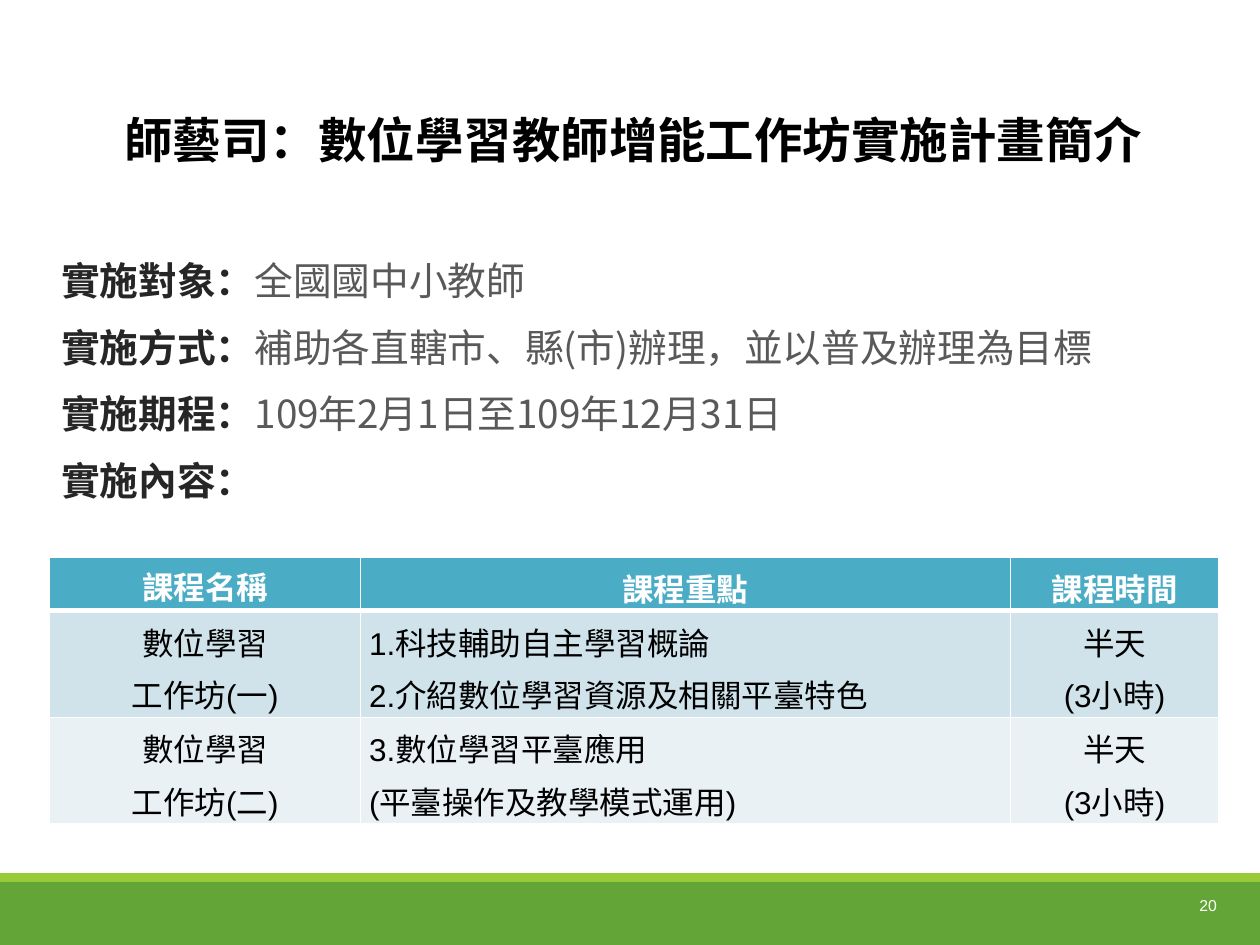
from lxml import etree
from pptx import Presentation
from pptx.dml.color import RGBColor
from pptx.enum.shapes import MSO_SHAPE
from pptx.enum.text import MSO_ANCHOR, PP_ALIGN
from pptx.oxml.ns import qn
from pptx.util import Pt

RECTANGLE = MSO_SHAPE.RECTANGLE
TOP, MIDDLE = MSO_ANCHOR.TOP, MSO_ANCHOR.MIDDLE
LEFT, CENTER, RIGHT, JUSTIFY = (
    PP_ALIGN.LEFT, PP_ALIGN.CENTER, PP_ALIGN.RIGHT, PP_ALIGN.JUSTIFY)

WHITE = RGBColor(0xFF, 0xFF, 0xFF)
BLACK = RGBColor(0, 0, 0)
LABEL_GRAY = RGBColor(0x26, 0x26, 0x26)
DETAIL_GRAY = RGBColor(0x59, 0x59, 0x59)
GREEN = RGBColor(0x63, 0xA5, 0x37)
LIME = RGBColor(0x99, 0xCB, 0x38)
HEADER_TEAL = RGBColor(0x4B, 0xAC, 0xC6)
ROW_FILLS = [RGBColor(0xD0, 0xE3, 0xEA), RGBColor(0xE9, 0xF1, 0xF5)]

CJK, LATIN = "Noto Sans CJK SC", "Arial"
SLIDE_WIDTH, SLIDE_HEIGHT = 720, 540

TITLE = "師藝司：數位學習教師增能工作坊實施計畫簡介"
PLAN = [
    ("實施對象：", "全國國中小教師"),
    ("實施方式：", "補助各直轄市、縣(市)辦理，並以普及辦理為目標"),
    ("實施期程：", "109年2月1日至109年12月31日"),
    ("實施內容：", ""),
]
PAGE_NUMBER = "20"

# Each cell is a list of paragraphs; "\n" is a line break inside one.
HEADERS = ["課程名稱", "課程重點", "課程時間"]
COURSES = [
    [["數位學習", "工作坊(一)"],
     ["1.科技輔助自主學習概論", "2.介紹數位學習資源及相關平臺特色"],
     ["半天", "(3小時)"]],
    [["數位學習", "工作坊(二)"],
     ["3.數位學習平臺應用\n(平臺操作及教學模式運用)"],
     ["半天", "(3小時)"]],
]
FOCUS_COLUMN = 1
FOCUS_ALIGNMENTS = [JUSTIFY, LEFT]
COLUMN_WIDTHS = [177.5, 371.5, 119]
ROW_HEIGHTS = [30.5, 61, 61]


def add_run(paragraph, text, size, color, bold=False, font=CJK):
    run = paragraph.add_run()
    run.text = text
    run.font.name = font
    run.font.size = Pt(size)
    run.font.bold = bold
    run.font.color.rgb = color
    east_asian = etree.SubElement(run.font._element, qn("a:ea"))
    east_asian.set("typeface", CJK)


def add_text_frame(slide, left, top, width, height, anchor=TOP):
    box = slide.shapes.add_textbox(Pt(left), Pt(top), Pt(width), Pt(height))
    box.text_frame.word_wrap = True
    box.text_frame.vertical_anchor = anchor
    return box.text_frame


def paragraphs_for(frame, items):
    """Yield each item with its own paragraph, using the first existing one."""
    for index, item in enumerate(items):
        yield frame.add_paragraph() if index else frame.paragraphs[0], item


def add_band(slide, top, height, color):
    band = slide.shapes.add_shape(
        RECTANGLE, Pt(0), Pt(top), Pt(SLIDE_WIDTH), Pt(height))
    band.shadow.inherit = False
    band.fill.solid()
    band.fill.fore_color.rgb = color
    band.line.fill.background()


def set_borders(cell, bottom_width):
    """Draw white borders; they must come before the cell's fill in the XML."""
    properties = cell._tc.get_or_add_tcPr()
    widths = {"a:lnL": 1, "a:lnR": 1, "a:lnT": 1, "a:lnB": bottom_width}
    for position, (side, width) in enumerate(widths.items()):
        line = etree.Element(qn(side), w=str(int(Pt(width))))
        fill = etree.SubElement(line, qn("a:solidFill"))
        etree.SubElement(fill, qn("a:srgbClr"), val=str(WHITE))
        properties.insert(position, line)


def fill_cell(cell, lines, fill, color, bold, alignment, spacing=30, bottom=1):
    cell.fill.solid()
    cell.fill.fore_color.rgb = fill
    set_borders(cell, bottom)
    cell.vertical_anchor = MIDDLE
    cell.margin_left = cell.margin_right = Pt(5)
    cell.margin_top = cell.margin_bottom = Pt(0)
    for paragraph, text in paragraphs_for(cell.text_frame, lines):
        paragraph.alignment = alignment
        paragraph.line_spacing = Pt(spacing)
        for index, part in enumerate(text.split("\n")):
            if index:
                paragraph.add_line_break()
            add_run(paragraph, part, 18, color, bold, LATIN)


def add_course_table(slide):
    table = slide.shapes.add_table(
        len(ROW_HEIGHTS), len(COLUMN_WIDTHS), Pt(28.4), Pt(318.5),
        Pt(sum(COLUMN_WIDTHS)), Pt(sum(ROW_HEIGHTS))).table
    for column, width in zip(table.columns, COLUMN_WIDTHS):
        column.width = Pt(width)
    for row, height in zip(table.rows, ROW_HEIGHTS):
        row.height = Pt(height)
    for column, header in enumerate(HEADERS):
        fill_cell(table.cell(0, column), [header], HEADER_TEAL, WHITE, True,
                  CENTER, spacing=30 if column else 28, bottom=3)
    for row, course in enumerate(COURSES):
        for column, lines in enumerate(course):
            alignment = FOCUS_ALIGNMENTS[row] if column == FOCUS_COLUMN else CENTER
            fill_cell(table.cell(row + 1, column), lines, ROW_FILLS[row],
                      BLACK, False, alignment)


def main():
    deck = Presentation()
    deck.slide_width, deck.slide_height = Pt(SLIDE_WIDTH), Pt(SLIDE_HEIGHT)
    slide = deck.slides.add_slide(deck.slide_layouts[6])

    add_band(slide, 504, 36, GREEN)
    add_band(slide, 499, 5, LIME)

    title = add_text_frame(slide, 64, 54, 599, 55, MIDDLE).paragraphs[0]
    title.line_spacing = 0.9
    add_run(title, TITLE, 27.7, BLACK, True)

    plan_frame = add_text_frame(slide, 28, 146, 662, 169)
    for paragraph, (label, detail) in paragraphs_for(plan_frame, PLAN):
        paragraph.line_spacing = Pt(24)
        paragraph.space_before = Pt(12)
        paragraph.space_after = Pt(2)
        add_run(paragraph, label, 22.1, LABEL_GRAY, True)
        if detail:
            add_run(paragraph, detail, 22.1, DETAIL_GRAY)

    add_course_table(slide)

    number = add_text_frame(slide, 625, 508.5, 77.5, 28.5).paragraphs[0]
    number.alignment = RIGHT
    add_run(number, PAGE_NUMBER, 9, WHITE, font=LATIN)

    deck.save("out.pptx")


if __name__ == "__main__":
    main()
